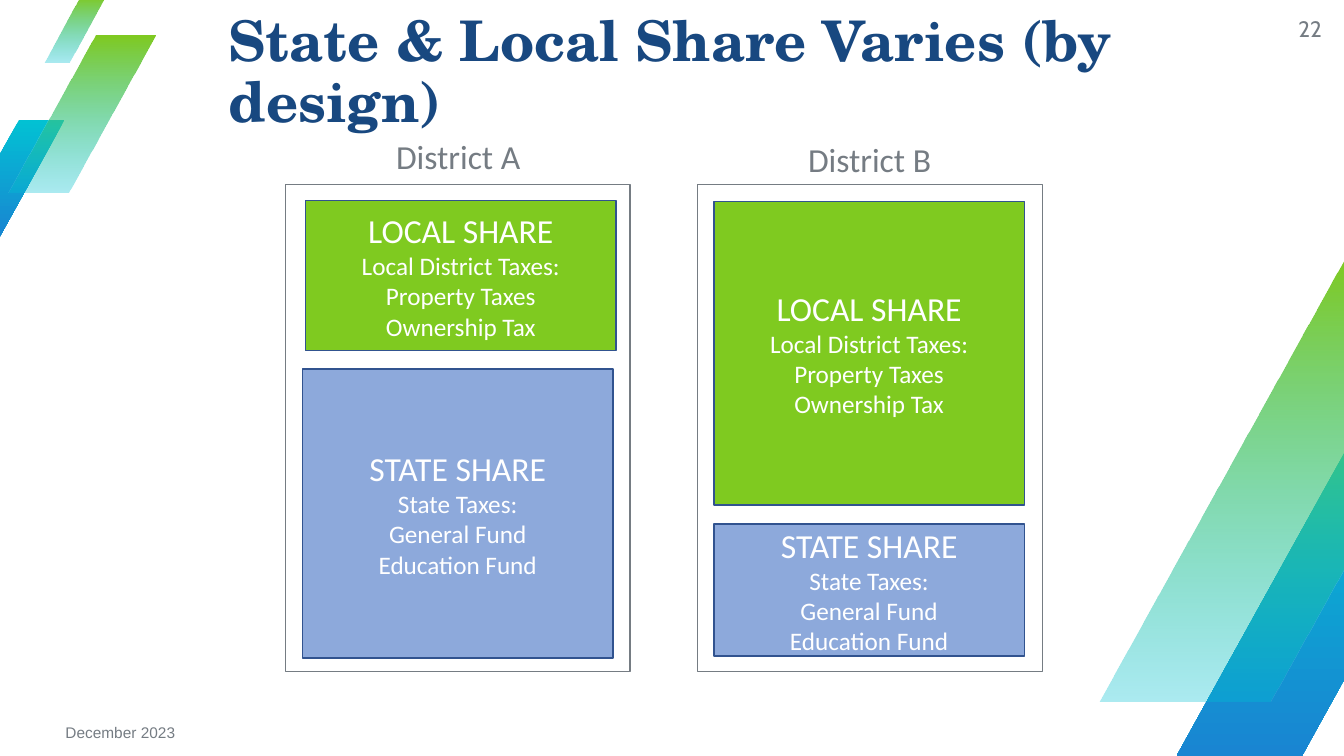
from dataclasses import dataclass
from lxml.etree import SubElement
from pptx import Presentation
from pptx.dml.color import RGBColor
from pptx.enum.shapes import MSO_SHAPE as Shape
from pptx.enum.text import MSO_ANCHOR as Anchor, MSO_AUTO_SIZE as AutoSize, PP_ALIGN as Align
from pptx.oxml.ns import qn
from pptx.util import Emu, Pt

EMU_PER_PX = 9144  # 100 px to the inch
TITLE_ONLY = 5


@dataclass(frozen=True)
class Theme:
    navy: str = "184880"
    grey: str = "757C83"
    green: str = "7FCA20"
    teal: str = "02C1D3"
    blue: str = "1985D2"
    periwinkle: str = "8DA9DB"
    outline: str = "31538F"
    white: str = "FFFFFF"
    title_font: str = "TeX Gyre Schola"
    body_font: str = "Calibri"
    number_font: str = "Cabin"
    date_font: str = "Arial"
    title_size: int = 40
    heading_size: int = 24
    detail_size: int = 18
    number_size: int = 16
    date_size: int = 11


THEME = Theme()
LOCAL = ("LOCAL SHARE", "Local District Taxes:", "Property Taxes", "Ownership Tax")
STATE = ("STATE SHARE", "State Taxes:", "General Fund", "Education Fund")

# name, name position, frame position, local share area, state share area
DISTRICTS = (
    ("District A", (310, 130), (283, 183), (303, 199, 308, 149), (300, 366, 308, 287)),
    ("District B", (718, 133), (692, 183), (708, 200, 308, 301), (708, 520, 308, 131)),
)

FADING = (THEME.green, THEME.teal, 33)
SOLID = (THEME.teal, THEME.blue, 100)
STRIPES = (
    ((-46, 119, 110, 117), SOLID),
    ((8, 35, 146, 156), FADING),
    ((44, -3, 61, 65), FADING),
    ((1167, 427, 303, 323), SOLID),
    ((1091, 256, 413, 440), FADING),
)


def px(length):
    return Emu(length * EMU_PER_PX)


def rgb(color):
    return RGBColor.from_string(color)


def add_run(para, text, font, size, color, bold=False):
    span = para.add_run()
    span.text = text
    span.font.name = font
    span.font.size = Pt(size)
    span.font.color.rgb = rgb(color)
    span.font.bold = bold


def add_preset(page, preset, area):
    shape = page.shapes.add_shape(preset, *map(px, area))
    shape.shadow.inherit = False
    return shape


def add_stripe(page, area, gradient):
    """Add a slanted band shading from top to bottom; the last stop may be transparent."""
    top, bottom, opacity = gradient
    stripe = add_preset(page, Shape.PARALLELOGRAM, area)
    stripe.adjustments[0] = 0.59
    stripe.line.fill.background()
    stripe.fill.gradient()
    stripe.fill.gradient_angle = 270
    stops = stripe.fill.gradient_stops
    for stop, color, position in zip(stops, (top, bottom), (0, 1)):
        stop.color.rgb = rgb(color)
        stop.position = position
    if opacity < 100:
        last_color = list(stripe.element.iter(qn("a:srgbClr")))[-1]
        SubElement(last_color, qn("a:alpha"), val=str(opacity * 1000))


def add_box(page, area, line, fill=None):
    box = add_preset(page, Shape.RECTANGLE, area)
    if fill:
        box.fill.solid()
        box.fill.fore_color.rgb = rgb(fill)
    else:
        box.fill.background()
    box.line.color.rgb = rgb(line)
    box.line.width = Pt(1)
    return box


def add_share(page, area, fill, lines):
    frame = add_box(page, area, THEME.outline, fill).text_frame
    frame.word_wrap = True
    frame.vertical_anchor = Anchor.MIDDLE
    for index, text in enumerate(lines):
        para = frame.add_paragraph() if index else frame.paragraphs[0]
        para.alignment = Align.CENTER
        size = THEME.detail_size if index else THEME.heading_size
        add_run(para, text, THEME.body_font, size, THEME.white)


def add_label(page, area, text, font, size, align):
    frame = page.shapes.add_textbox(*map(px, area)).text_frame
    frame.word_wrap = True
    para = frame.paragraphs[0]
    para.alignment = align
    add_run(para, text, font, size, THEME.grey)
    return frame


def add_page_number(page, area, text):
    frame = add_label(page, area, text, THEME.number_font, THEME.number_size, Align.RIGHT)
    frame.vertical_anchor = Anchor.MIDDLE
    frame.margin_left = frame.margin_right = frame.margin_top = frame.margin_bottom = 0


def set_title(page, area, text):
    title = page.shapes.title
    title.left, title.top, title.width, title.height = map(px, area)
    frame = title.text_frame
    frame.word_wrap = True
    frame.auto_size = AutoSize.NONE
    frame.vertical_anchor = Anchor.MIDDLE
    para = frame.paragraphs[0]
    para.alignment = Align.LEFT
    para.line_spacing = 0.9
    add_run(para, text, THEME.title_font, THEME.title_size, THEME.navy, bold=True)


def add_district(page, name, name_at, frame_at, local_area, state_area):
    add_box(page, (*frame_at, 342, 483), THEME.grey)
    add_share(page, local_area, THEME.green, LOCAL)
    add_share(page, state_area, THEME.periwinkle, STATE)
    add_label(page, (*name_at, 289, 50), name, THEME.body_font, THEME.heading_size, Align.CENTER)


def main():
    deck = Presentation()
    deck.slide_width, deck.slide_height = px(1333), px(750)
    page = deck.slides.add_slide(deck.slide_layouts[TITLE_ONLY])
    for area, gradient in STRIPES:
        add_stripe(page, area, gradient)
    set_title(page, (217, 30, 900, 87), "State & Local Share Varies (by design)")
    for district in DISTRICTS:
        add_district(page, *district)
    add_page_number(page, (1248, 0, 63, 57), "22")
    add_label(page, (55, 712, 172, 29), "December 2023", THEME.date_font, THEME.date_size, Align.LEFT)
    deck.save("out.pptx")


if __name__ == "__main__":
    main()
